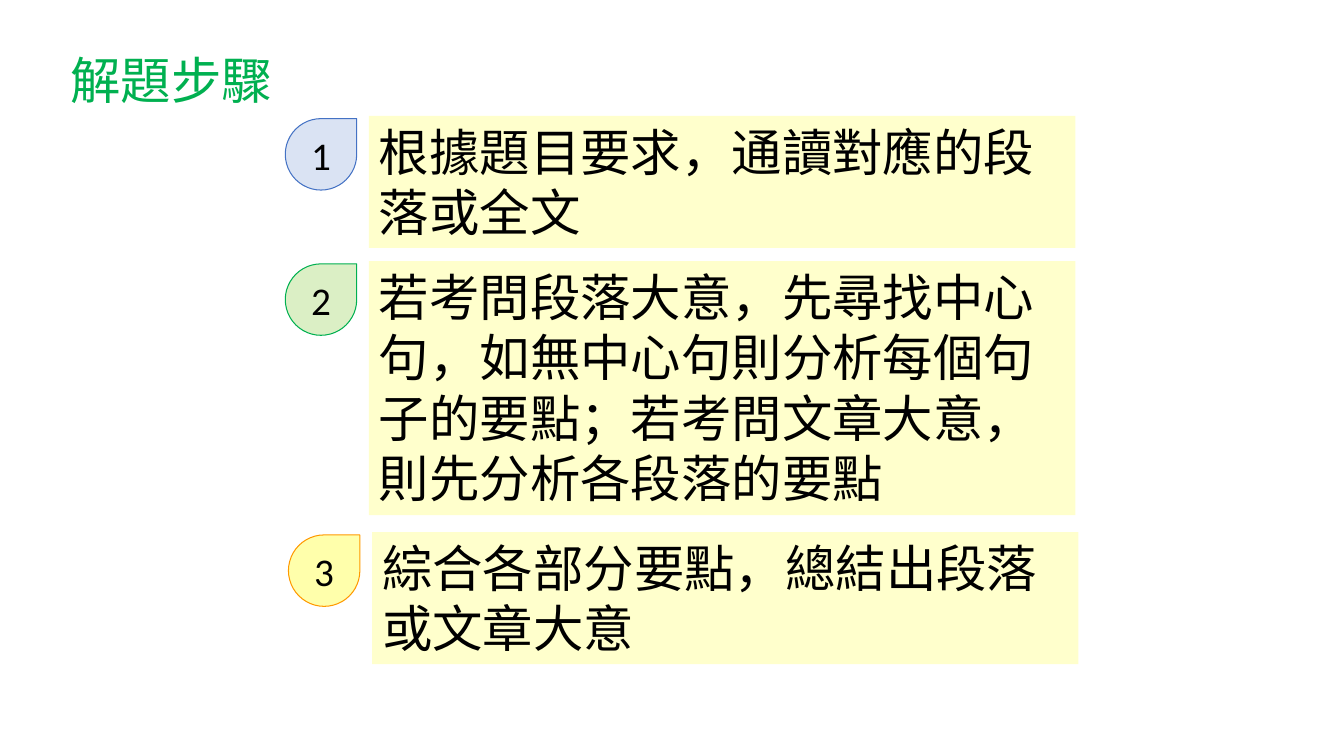
import pptx
import pptx.util
import pptx.dml.color
import pptx.enum.shapes
import pptx.enum.text
import pptx.oxml.ns
import lxml.etree

Cm = pptx.util.Cm
Pt = pptx.util.Pt
RGBColor = pptx.dml.color.RGBColor
Shape = pptx.enum.shapes.MSO_SHAPE
Align = pptx.enum.text.PP_ALIGN
Anchor = pptx.enum.text.MSO_ANCHOR
AutoSize = pptx.enum.text.MSO_AUTO_SIZE

BLACK = RGBColor(0x00, 0x00, 0x00)
CREAM = RGBColor(0xFF, 0xFF, 0xCC)
GREEN = RGBColor(0x00, 0xB0, 0x50)
LIME = RGBColor(0x92, 0xD0, 0x50)
BLUE = RGBColor(0x44, 0x72, 0xC4)
PALE_BLUE = RGBColor(0x8F, 0xAA, 0xDC)
ORANGE = RGBColor(0xFF, 0x99, 0x00)
YELLOW = RGBColor(0xFF, 0xFF, 0x00)

# Step text, left, top, height (cm), badge fill, badge outline
STEPS = [
    ("根據題目要求，通讀對應的段落或全文", 9.3, 2.92, 3.33, PALE_BLUE, BLUE),
    ("若考問段落大意，先尋找中心句，如無中心句則分析每個句子的要點；"
     "若考問文章大意，則先分析各段落的要點", 9.3, 6.58, 6.4, LIME, GREEN),
    ("綜合各部分要點，總結出段落或文章大意", 9.38, 13.41, 3.33, YELLOW, ORANGE),
]
STEP_WIDTH = 17.8
BADGE_SIZE = 1.8
BADGE_OFFSET = (-2.11, 0.07)


class StepSlide:
    TITLE = {"name": "Noto Sans CJK SC", "size": Pt(36), "bold": False}
    STEP = {"name": "Roboto", "size": Pt(36)}
    BADGE = {"name": "Calibri", "size": Pt(28)}

    def __init__(self, deck):
        self.slide = deck.slides.add_slide(deck.slide_layouts[5])

    def put_text(self, shape, text, font, color, align, frame_format):
        frame = shape.text_frame
        for key, value in frame_format.items():
            setattr(frame, key, value)
        paragraph = frame.paragraphs[0]
        paragraph.text = text
        paragraph.alignment = align
        for key, value in font.items():
            setattr(paragraph.font, key, value)
        paragraph.font.color.rgb = color

    def title(self, text, left, top, width, height):
        heading = self.slide.shapes.title
        place = {"left": left, "top": top, "width": width, "height": height}
        for key, value in place.items():
            setattr(heading, key, Cm(value))
        self.put_text(heading, text, self.TITLE, GREEN, Align.LEFT,
                      {"word_wrap": False, "vertical_anchor": Anchor.TOP,
                       "auto_size": AutoSize.SHAPE_TO_FIT_TEXT})

    def block(self, kind, left, top, width, height, fill):
        block = self.slide.shapes.add_shape(
            kind, Cm(left), Cm(top), Cm(width), Cm(height))
        block.shadow.inherit = False
        block.fill.solid()
        block.fill.fore_color.rgb = fill
        return block

    def step(self, text, left, top, height):
        panel = self.block(Shape.RECTANGLE, left, top, STEP_WIDTH, height, CREAM)
        panel.line.fill.background()
        self.put_text(panel, text, self.STEP, BLACK, Align.LEFT,
                      {"word_wrap": True, "vertical_anchor": Anchor.TOP,
                       "auto_size": AutoSize.SHAPE_TO_FIT_TEXT})

    def badge(self, number, left, top, fill, outline):
        """Draw a numbered teardrop with a fill of 33% opacity."""
        drop = self.block(Shape.TEAR, left, top, BADGE_SIZE, BADGE_SIZE, fill)
        qn = pptx.oxml.ns.qn
        fill_color = drop.element.spPr.find(qn("a:solidFill"))[0]
        lxml.etree.SubElement(fill_color, qn("a:alpha"), val="33000")
        drop.line.color.rgb = outline
        drop.line.width = Pt(0.75)
        self.put_text(drop, str(number), self.BADGE, BLACK, Align.CENTER,
                      {"word_wrap": True, "vertical_anchor": Anchor.MIDDLE})


def main():
    deck = pptx.Presentation()
    deck.slide_width, deck.slide_height = Cm(33.87), Cm(19.05)
    page = StepSlide(deck)
    page.title("解題步驟", 1.52, 1.12, 5.64, 1.8)
    dx, dy = BADGE_OFFSET
    for number, (text, left, top, height, fill, outline) in enumerate(STEPS, 1):
        page.step(text, left, top, height)
        page.badge(number, left + dx, top + dy, fill, outline)
    deck.save("out.pptx")


if __name__ == "__main__":
    main()
